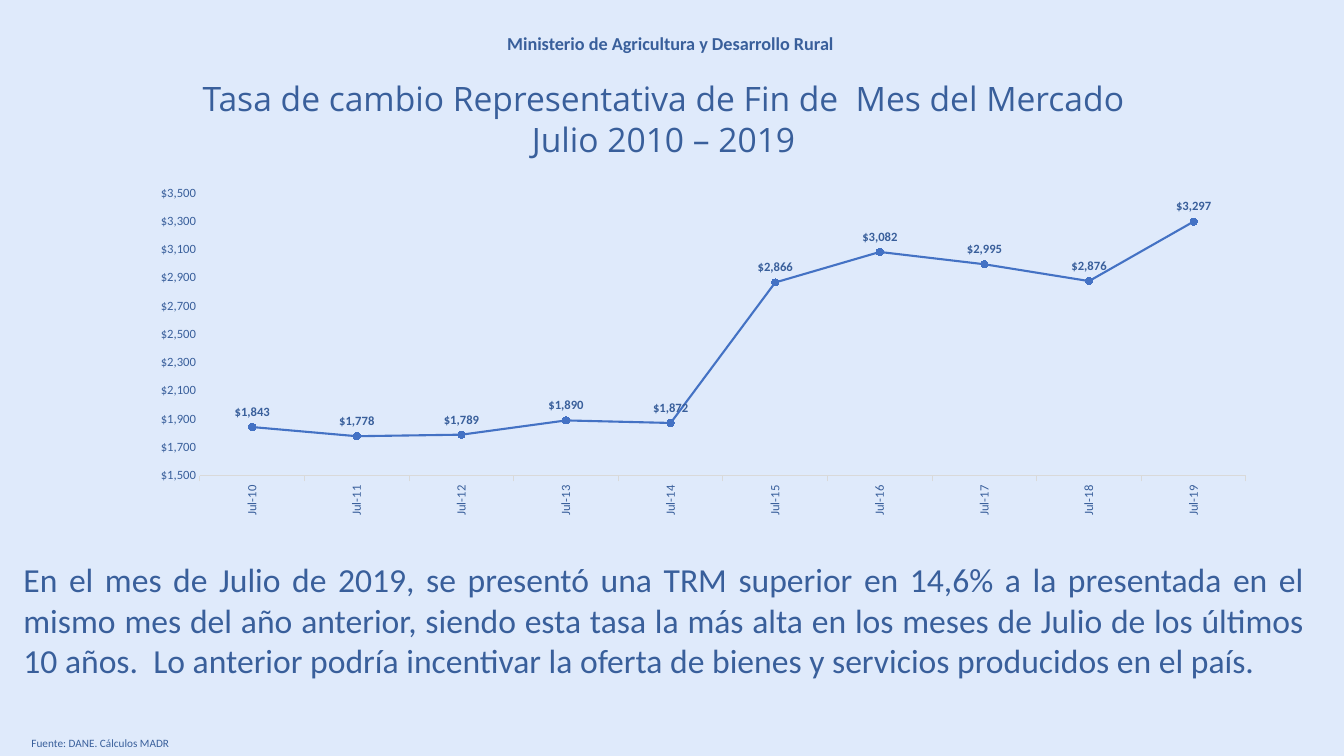
import pptx
import pptx.chart.data
import pptx.dml.color
import pptx.enum.chart
import pptx.enum.text
import pptx.oxml
import pptx.oxml.ns
import pptx.util

WIDTH, HEIGHT = 13.33, 7.5
COLORS = {"background": "DFEAFB", "text": "395F9B", "line": "4472C4", "axis": "D9D9D9"}
BODY, HEADING = "Calibri", "Open Sans"
ALIGN = pptx.enum.text.PP_ALIGN
DOLLARS = '"$"#,##0'
# Exchange rate at the end of each July, 2010 to 2019
RATES = [1843, 1778, 1789, 1890, 1872, 2866, 3082, 2995, 2876, 3297]
# Inner plot area as shares of the chart frame
PLOT_AREA = {"x": 0.06, "y": 0.04, "w": 0.92, "h": 0.82}


def rgb(name):
    return pptx.dml.color.RGBColor.from_string(COLORS[name])


def box(left, top, width, height):
    """Turn shares of the slide's size into lengths."""
    return [pptx.util.Inches(share * side)
            for share, side in zip((left, top, width, height), (WIDTH, HEIGHT) * 2)]


def set_font(font, size, name=BODY, bold=False):
    values = {"size": pptx.util.Pt(size), "name": name, "bold": bold}
    for key, value in values.items():
        setattr(font, key, value)
    font.color.rgb = rgb("text")


def add_text(s, place, lines, size, align, name=BODY, bold=False, wrap=True):
    tf = s.shapes.add_textbox(*box(*place)).text_frame
    tf.word_wrap = wrap
    for i, line in enumerate(lines):
        p = tf.paragraphs[0] if i == 0 else tf.add_paragraph()
        p.alignment = align
        r = p.add_run()
        r.text = line
        set_font(r.font, size, name, bold)


def style_axes(chart):
    months, dollars = chart.category_axis, chart.value_axis
    for axis in (months, dollars):
        axis.has_major_gridlines = False
        axis.minor_tick_mark = pptx.enum.chart.XL_TICK_MARK.NONE
        set_font(axis.tick_labels.font, 9)
    months.major_tick_mark = pptx.enum.chart.XL_TICK_MARK.OUTSIDE
    months.format.line.color.rgb = rgb("axis")
    months.format.line.width = pptx.util.Pt(0.75)
    months.tick_labels.font._element.getparent().getparent().getparent().find(
        pptx.oxml.ns.qn("a:bodyPr")).set("rot", "-5400000")
    scale = {"minimum_scale": 1500, "maximum_scale": 3500, "major_unit": 200}
    for key, value in scale.items():
        setattr(dollars, key, value)
    dollars.major_tick_mark = pptx.enum.chart.XL_TICK_MARK.NONE
    dollars.format.line.fill.background()
    dollars.tick_labels.number_format = DOLLARS
    dollars.tick_labels.number_format_is_linked = False


def style_series(series):
    series.smooth = False
    series.format.line.color.rgb = rgb("line")
    series.format.line.width = pptx.util.Pt(1.5)
    marker = series.marker
    marker.style = pptx.enum.chart.XL_MARKER_STYLE.CIRCLE
    marker.size = 5
    marker.format.fill.solid()
    marker.format.fill.fore_color.rgb = rgb("line")
    marker.format.line.color.rgb = rgb("line")
    labels = series.data_labels
    values = {"show_value": True, "number_format": DOLLARS,
              "number_format_is_linked": False,
              "position": pptx.enum.chart.XL_LABEL_POSITION.ABOVE}
    for key, value in values.items():
        setattr(labels, key, value)
    set_font(labels.font, 9, bold=True)


def set_plot_area(chart):
    """Fix the inner plot area inside the chart frame."""
    parts = '<c:layoutTarget val="inner"/><c:xMode val="edge"/><c:yMode val="edge"/>'
    parts += "".join(f'<c:{key} val="{value}"/>' for key, value in PLOT_AREA.items())
    layout = pptx.oxml.parse_xml(
        f'<c:layout {pptx.oxml.ns.nsdecls("c")}><c:manualLayout>{parts}'
        '</c:manualLayout></c:layout>')
    area = chart._chartSpace.chart.plotArea
    for old in area.findall(pptx.oxml.ns.qn("c:layout")):
        area.remove(old)
    area.insert(0, layout)


def add_rate_chart(s, place):
    data = pptx.chart.data.CategoryChartData(number_format=DOLLARS)
    data.categories = [f"Jul-{year}" for year in range(10, 10 + len(RATES))]
    data.add_series("TRM", RATES)
    chart = s.shapes.add_chart(
        pptx.enum.chart.XL_CHART_TYPE.LINE_MARKERS, *box(*place), data).chart
    chart.has_legend = False
    chart.has_title = False
    set_font(chart.font, 10)
    chart.plots[0].vary_by_categories = False
    style_axes(chart)
    style_series(chart.plots[0].series[0])
    set_plot_area(chart)


def main():
    prs = pptx.Presentation()
    prs.slide_width = pptx.util.Inches(WIDTH)
    prs.slide_height = pptx.util.Inches(HEIGHT)
    s = prs.slides.add_slide(prs.slide_layouts[6])
    s.background.fill.solid()
    s.background.fill.fore_color.rgb = rgb("background")

    add_text(s, (0.37, 0.036, 0.26, 0.04), ["Ministerio de Agricultura y Desarrollo Rural"],
             13, ALIGN.LEFT, bold=True, wrap=False)
    add_text(s, (0.01, 0.097, 0.974, 0.12),
             ["Tasa de cambio Representativa de Fin de  Mes del Mercado ",
              "Julio 2010 – 2019 "], 24, ALIGN.CENTER, HEADING)
    add_rate_chart(s, (0.098, 0.237, 0.846, 0.456))
    add_text(s, (0.01, 0.733, 0.968, 0.175),
             ["En el mes de Julio de 2019, se presentó una TRM superior en 14,6% a la "
              "presentada en el mismo mes del año anterior, siendo esta tasa la más alta "
              "en los meses de Julio de los últimos 10 años.  Lo anterior podría incentivar "
              "la oferta de bienes y servicios producidos en el país."], 24, ALIGN.JUSTIFY)
    add_text(s, (0.016, 0.967, 0.968, 0.032), ["Fuente: DANE. Cálculos MADR"],
             8, ALIGN.JUSTIFY)
    prs.save("out.pptx")


if __name__ == "__main__":
    main()
